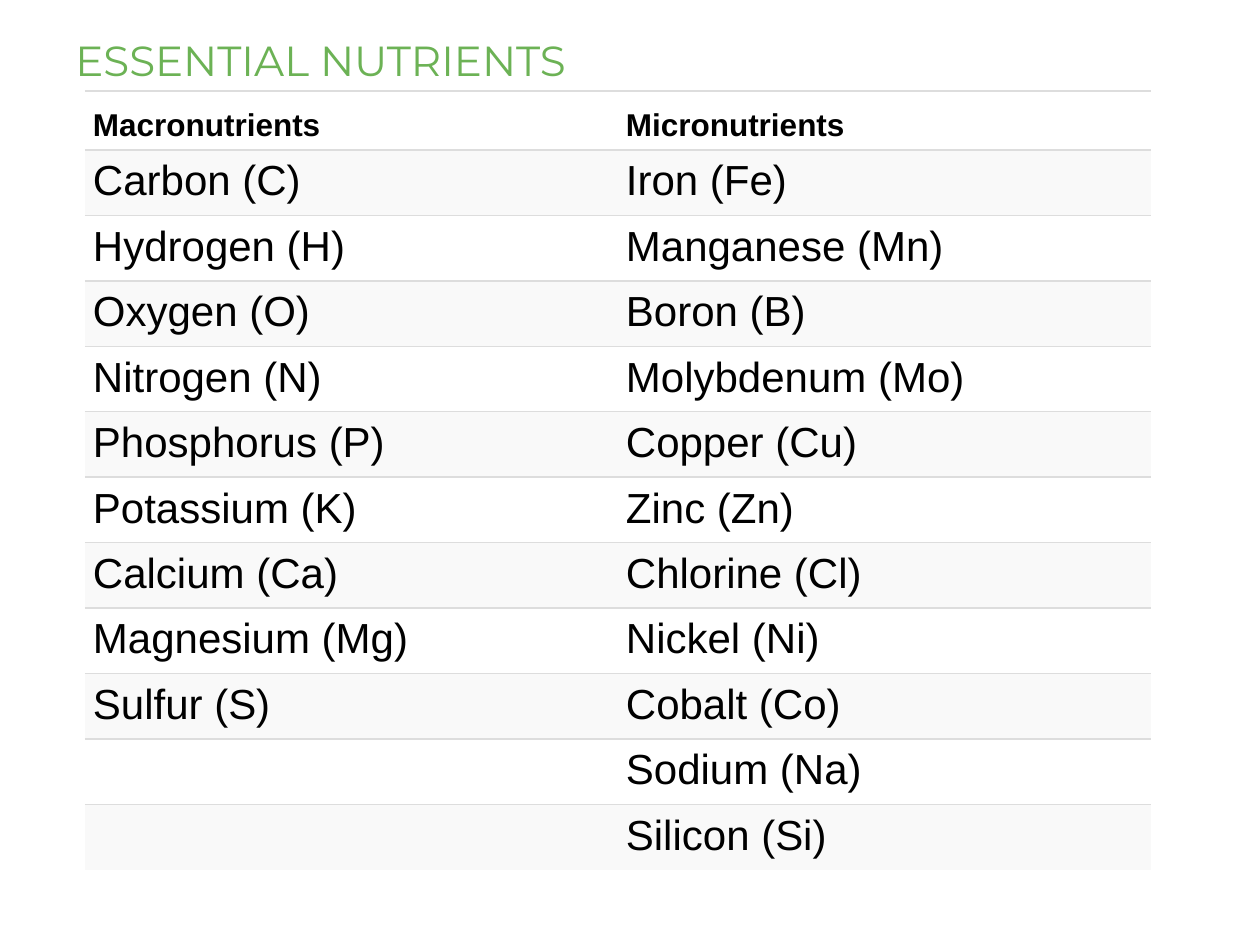
import pptx
import pptx.util
import pptx.dml.color
import pptx.enum.text
import lxml.etree
import itertools

PX = 914400 // 126
GREEN = pptx.dml.color.RGBColor(0x6C, 0xB2, 0x55)
BLACK = pptx.dml.color.RGBColor(0, 0, 0)
STRIPE = pptx.dml.color.RGBColor(0xF9, 0xF9, 0xF9)
RULE = pptx.dml.color.RGBColor(0xDD, 0xDD, 0xDD)
NS = "http://schemas.openxmlformats.org/drawingml/2006/main"

MACRO = ["Macronutrients", "Carbon (C)", "Hydrogen (H)", "Oxygen (O)",
         "Nitrogen (N)", "Phosphorus (P)", "Potassium (K)", "Calcium (Ca)",
         "Magnesium (Mg)", "Sulfur (S)"]
MICRO = ["Micronutrients", "Iron (Fe)", "Manganese (Mn)", "Boron (B)",
         "Molybdenum (Mo)", "Copper (Cu)", "Zinc (Zn)", "Chlorine (Cl)",
         "Nickel (Ni)", "Cobalt (Co)", "Sodium (Na)", "Silicon (Si)"]


def set_borders(cell, top, bottom):
    """Draw the horizontal rules asked for and clear the other edges."""
    edges = [("lnL", False), ("lnR", False), ("lnT", top), ("lnB", bottom)]
    for i, (tag, shown) in enumerate(edges):
        ln = lxml.etree.Element(f"{{{NS}}}{tag}", w="12700")
        if shown:
            fill = lxml.etree.SubElement(ln, f"{{{NS}}}solidFill")
            lxml.etree.SubElement(fill, f"{{{NS}}}srgbClr", val=str(RULE))
        else:
            lxml.etree.SubElement(ln, f"{{{NS}}}noFill")
        cell._tc.get_or_add_tcPr().insert(i, ln)


prs = pptx.Presentation()
prs.slide_width = 1260 * PX
prs.slide_height = 945 * PX
s = prs.slides.add_slide(prs.slide_layouts[6])

# Title
sp = s.shapes.add_textbox(63 * PX, 0, 1111 * PX, 91 * PX)
tf = sp.text_frame
tf.word_wrap = True
tf.vertical_anchor = pptx.enum.text.MSO_ANCHOR.BOTTOM
p = tf.paragraphs[0]
p.text = "ESSENTIAL NUTRIENTS"
p.font.name = "Montserrat"
p.font.size = pptx.util.Pt(24)
p.font.color.rgb = GREEN

# Nutrient table
rows = list(itertools.zip_longest(MACRO, MICRO, fillvalue=""))
last = len(rows) - 1
table = s.shapes.add_table(len(rows), 2, 85 * PX, 91 * PX,
                           1066 * PX, (59 + 64 * last) * PX).table
table.first_row = False
table.horz_banding = False
for col in table.columns:
    col.width = 533 * PX

for i, texts in enumerate(rows):
    header = i == 0
    table.rows[i].height = (59 if header else 64) * PX
    for j, text in enumerate(texts):
        cell = table.cell(i, j)
        cell.margin_left = cell.margin_right = cell.margin_top = 8 * PX
        cell.margin_bottom = 7 * PX
        if header:
            cell.vertical_anchor = pptx.enum.text.MSO_ANCHOR.BOTTOM
        else:
            cell.vertical_anchor = pptx.enum.text.MSO_ANCHOR.TOP

        # Odd rows are striped
        if i % 2:
            cell.fill.solid()
            cell.fill.fore_color.rgb = STRIPE
        else:
            cell.fill.background()
        set_borders(cell, True, i < last)

        p = cell.text_frame.paragraphs[0]
        p.text = text
        p.font.name = "Arial"
        p.font.size = pptx.util.Pt(18 if header else 24)
        p.font.bold = header
        p.font.color.rgb = BLACK

prs.save("out.pptx")
